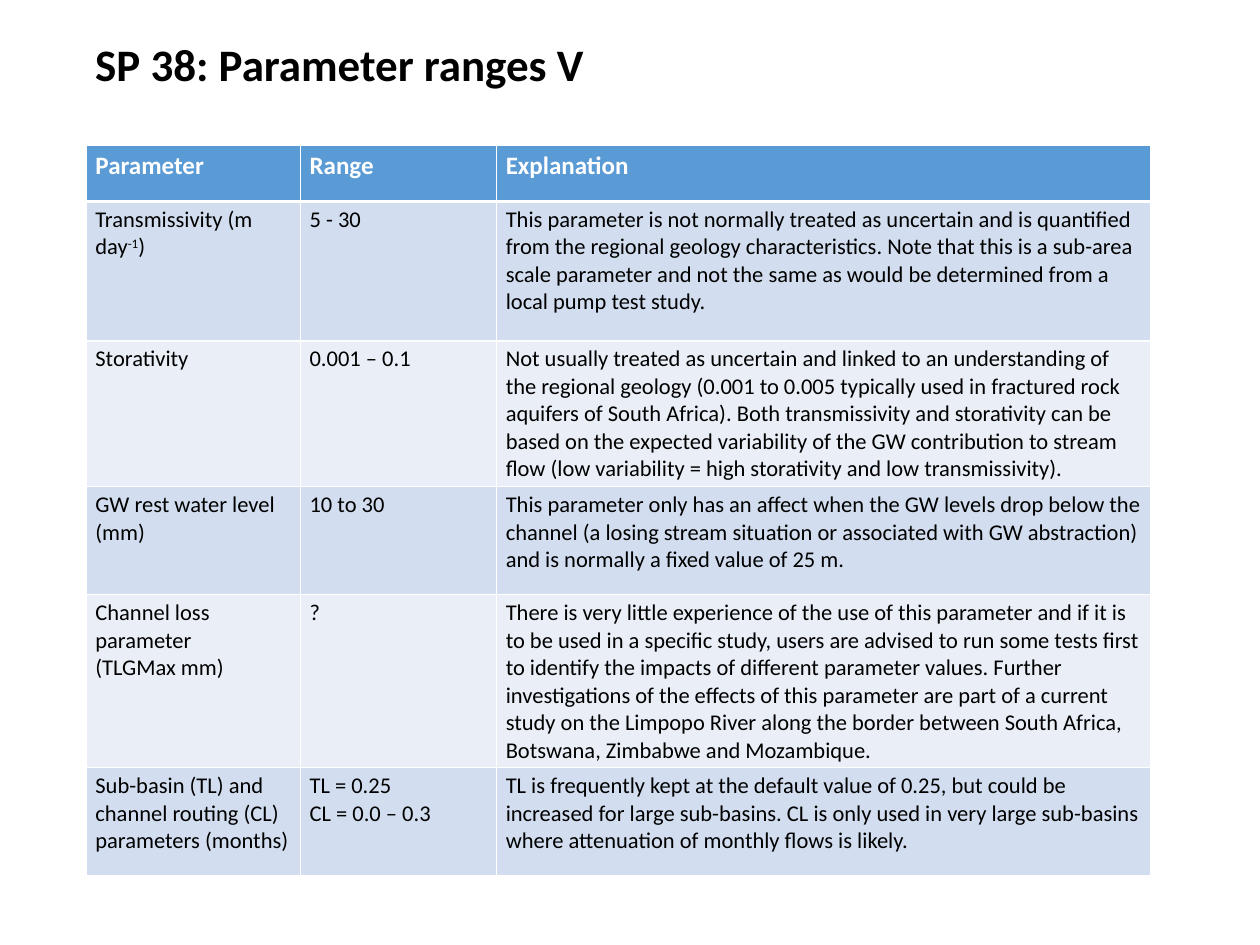
from dataclasses import dataclass

from lxml.etree import SubElement
from pptx import Presentation
from pptx.dml.color import RGBColor as Color
from pptx.enum.text import MSO_ANCHOR as Anchor
from pptx.oxml.ns import qn
from pptx.util import Inches, Pt

SLIDE_WIDTH, SLIDE_HEIGHT = Inches(14), Inches(10.5)


@dataclass(frozen=True)
class Theme:
    font: str = "Calibri"
    text: str = "000000"
    header_text: str = "FFFFFF"
    header_fill: str = "5B9BD5"
    band_fills: tuple[str, str] = ("D2DEEF", "EAEFF7")
    border: str = "FFFFFF"
    title_size: int = 36
    header_size: int = 20
    body_size: int = 18


@dataclass(frozen=True)
class ParameterRow:
    """A table row; ^ marks switch superscript on and off, newlines split paragraphs."""
    height: float
    parameter: str
    range: str
    explanation: str


THEME = Theme()
LEFT, TABLE_TOP = 6.86, 15.43  # percent of the slide, like all lengths below
TITLE_TOP, TITLE_WIDTH, TITLE_HEIGHT = 3.62, 86.21, 6.86
COLUMN_WIDTHS = (17, 15.57, 51.86)

ROWS = (
    ParameterRow(5.9, "Parameter", "Range", "Explanation"),
    ParameterRow(
        14.76, "Transmissivity (m day^-1^)", "5 - 30",
        "This parameter is not normally treated as uncertain and is quantified from the "
        "regional geology characteristics. Note that this is a sub-area scale parameter and "
        "not the same as would be determined from a local pump test study."),
    ParameterRow(
        15.43, "Storativity", "0.001 – 0.1",
        "Not usually treated as uncertain and linked to an understanding of the regional "
        "geology (0.001 to 0.005 typically used in fractured rock aquifers of South Africa). "
        "Both transmissivity and storativity can be based on the expected variability of the "
        "GW contribution to stream flow (low variability = high storativity and low "
        "transmissivity)."),
    ParameterRow(
        11.43, "GW rest water level (mm)", "10 to 30",
        "This parameter only has an affect when the GW levels drop below the channel (a "
        "losing stream situation or associated with GW abstraction) and is normally a fixed "
        "value of 25 m."),
    ParameterRow(
        18.29, "Channel loss parameter\n(TLGMax mm)", "?",
        "There is very little experience of the use of this parameter and if it is to be used "
        "in a specific study, users are advised to run some tests first to identify the "
        "impacts of different parameter values. Further investigations of the effects of this "
        "parameter are part of a current study on the Limpopo River along the border between "
        "South Africa, Botswana, Zimbabwe and Mozambique."),
    ParameterRow(
        11.43, "Sub-basin (TL) and channel routing (CL) parameters (months)",
        "TL = 0.25\nCL = 0.0 – 0.3",
        "TL is frequently kept at the default value of 0.25, but could be increased for large "
        "sub-basins. CL is only used in very large sub-basins where attenuation of monthly "
        "flows is likely."),
)


def across(percent: float) -> int:
    return round(SLIDE_WIDTH * percent / 100)


def down(percent: float) -> int:
    return round(SLIDE_HEIGHT * percent / 100)


def write_text(text_frame, text: str, size: int, color: str, bold: bool) -> None:
    font_format = {"name": THEME.font, "size": Pt(size), "bold": bold}
    for index, line in enumerate(text.split("\n")):
        paragraph = text_frame.add_paragraph() if index else text_frame.paragraphs[0]
        for part, piece in enumerate(line.split("^")):
            run = paragraph.add_run()
            run.text = piece
            for name, value in font_format.items():
                setattr(run.font, name, value)
            run.font.color.rgb = Color.from_string(color)
            if part % 2:
                run.font._element.set("baseline", "30000")


def set_borders(cell, bottom_width: float) -> None:
    properties = cell._tc.get_or_add_tcPr()
    widths = {"a:lnL": 1, "a:lnR": 1, "a:lnT": 1, "a:lnB": bottom_width}
    for position, (tag, width) in enumerate(widths.items()):
        line = SubElement(properties, qn(tag), w=str(Pt(width)))
        fill = SubElement(line, qn("a:solidFill"))
        SubElement(fill, qn("a:srgbClr"), val=THEME.border)
        properties.insert(position, line)  # borders precede the cell fill


def add_title(slide, text: str) -> None:
    shape = slide.shapes.add_textbox(
        across(LEFT), down(TITLE_TOP), across(TITLE_WIDTH), down(TITLE_HEIGHT))
    frame_format = {"word_wrap": True, "vertical_anchor": Anchor.MIDDLE}
    for name, value in frame_format.items():
        setattr(shape.text_frame, name, value)
    write_text(shape.text_frame, text, THEME.title_size, THEME.text, bold=True)
    shape.text_frame.paragraphs[0].line_spacing = 0.9


def add_parameter_table(slide, rows: tuple[ParameterRow, ...]) -> None:
    table = slide.shapes.add_table(
        len(rows), len(COLUMN_WIDTHS), across(LEFT), down(TABLE_TOP),
        across(sum(COLUMN_WIDTHS)), down(sum(row.height for row in rows))).table
    for column, width in zip(table.columns, COLUMN_WIDTHS):
        column.width = across(width)
    for index, row in enumerate(rows):
        header = index == 0
        fill = THEME.header_fill if header else THEME.band_fills[(index - 1) % 2]
        size = THEME.header_size if header else THEME.body_size
        color = THEME.header_text if header else THEME.text
        table.rows[index].height = down(row.height)
        texts = (row.parameter, row.range, row.explanation)
        for cell, text in zip(table.rows[index].cells, texts):
            cell.fill.solid()
            cell.fill.fore_color.rgb = Color.from_string(fill)
            set_borders(cell, bottom_width=3 if header else 1)
            write_text(cell.text_frame, text, size, color, bold=header)


def main() -> None:
    presentation = Presentation()
    presentation.slide_width, presentation.slide_height = SLIDE_WIDTH, SLIDE_HEIGHT
    slide = presentation.slides.add_slide(presentation.slide_layouts[6])
    add_title(slide, "SP 38: Parameter ranges V")
    add_parameter_table(slide, ROWS)
    presentation.save("out.pptx")


if __name__ == "__main__":
    main()
